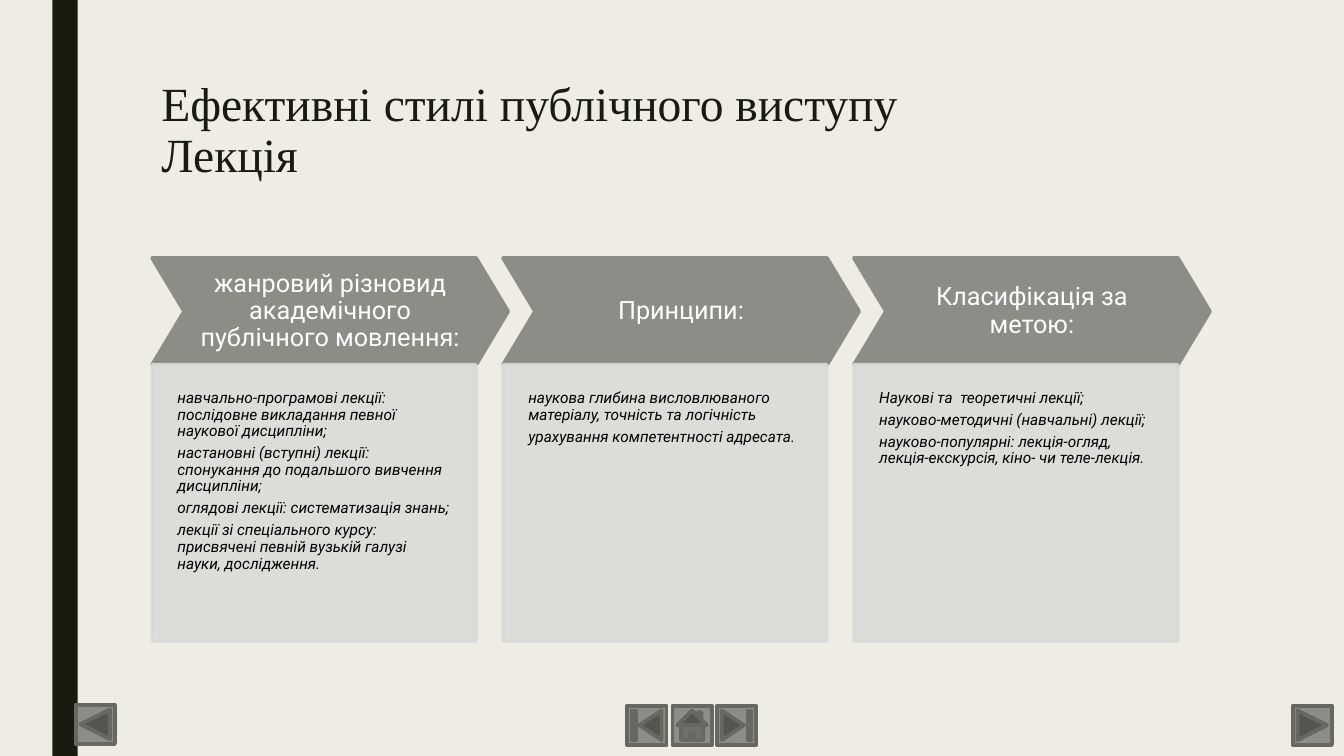
from dataclasses import dataclass

from lxml import etree
from pptx import Presentation
from pptx.dml.color import RGBColor
from pptx.enum.shapes import MSO_SHAPE
from pptx.enum.text import MSO_ANCHOR, MSO_AUTO_SIZE, PP_ALIGN
from pptx.oxml.ns import qn
from pptx.util import Inches, Pt

CHEVRON, RECTANGLE = MSO_SHAPE.CHEVRON, MSO_SHAPE.RECTANGLE
TOP, MIDDLE = MSO_ANCHOR.TOP, MSO_ANCHOR.MIDDLE
LEFT, CENTER = PP_ALIGN.LEFT, PP_ALIGN.CENTER


@dataclass(frozen=True)
class Theme:
    background: str = "EFEDE3"
    dark: str = "191B0E"
    accent: str = "8C8D86"
    card: str = "DADBD9"
    button_line: str = "686863"
    white: str = "FFFFFF"
    black: str = "000000"
    title_font: str = "Times New Roman"
    body_font: str = "Roboto"
    title_size: float = 34
    heading_size: float = 18
    body_size: float = 11
    line_width: float = 2.75


theme = Theme()


def add_block(kind, box, fill, line=None, opacity=None):
    """Add a filled shape; opacity is a percentage for fill and outline."""
    shape = slide.shapes.add_shape(kind, *map(Inches, box))
    shape.shadow.inherit = False
    shape.fill.solid()
    shape.fill.fore_color.rgb = RGBColor.from_string(fill)
    if line is None:
        shape.line.fill.background()
    else:
        shape.line.color.rgb = RGBColor.from_string(line)
        shape.line.width = Pt(theme.line_width)
    if opacity is not None:
        for color in shape._element.spPr.iter(qn("a:srgbClr")):
            etree.SubElement(color, qn("a:alpha"), val=str(opacity * 1000))
    return shape


def write_text(shape, lines, frame_format, paragraph_format, font_format, color):
    """Fill a shape with paragraphs that share one format."""
    frame = shape.text_frame
    frame.text = "\n".join(lines)
    for name, value in frame_format.items():
        setattr(frame, name, value)
    for paragraph in frame.paragraphs:
        for name, value in paragraph_format.items():
            setattr(paragraph, name, value)
        for run in paragraph.runs:
            for name, value in font_format.items():
                setattr(run.font, name, value)
            run.font.color.rgb = RGBColor.from_string(color)


# Text formats
title_frame = dict(word_wrap=True, auto_size=MSO_AUTO_SIZE.NONE, vertical_anchor=TOP)
title_paragraph = dict(alignment=LEFT, line_spacing=0.89)
title_text = dict(name=theme.title_font, size=Pt(theme.title_size))

heading_frame = dict(word_wrap=True, vertical_anchor=MIDDLE)
heading_frame |= {f"margin_{side}": Inches(0.13) for side in ("left", "top", "right", "bottom")}
heading_paragraph = dict(alignment=CENTER, line_spacing=0.9)
heading_text = dict(name=theme.body_font, size=Pt(theme.heading_size))

card_frame = dict(word_wrap=True, vertical_anchor=TOP, margin_bottom=Inches(0.51))
card_frame |= {f"margin_{side}": Inches(0.25) for side in ("left", "top", "right")}
card_paragraph = dict(alignment=LEFT, line_spacing=0.9, space_after=Pt(theme.body_size * 0.35))
card_text = dict(name=theme.body_font, size=Pt(theme.body_size), italic=True)

# Slide and background
presentation = Presentation()
presentation.slide_width, presentation.slide_height = Inches(13.33), Inches(7.5)
slide = presentation.slides.add_slide(presentation.slide_layouts[5])
slide.background.fill.solid()
slide.background.fill.fore_color.rgb = RGBColor.from_string(theme.background)
add_block(RECTANGLE, (0.52, 0, 0.25, 7.5), theme.dark)

# Title
title = slide.shapes.title
title.left, title.top, title.width, title.height = map(Inches, (1.5, 0.75, 10.5, 1.62))
write_text(title, ["Ефективні стилі публічного виступу\vЛекція"],
           title_frame, title_paragraph, title_text, theme.dark)

# Three columns: chevron heading above a card
columns = [
    ("жанровий різновид академічного публічного мовлення:", [
        "навчально-програмові лекції: послідовне викладання певної наукової дисципліни;",
        "настановні (вступні) лекції: спонукання до подальшого вивчення дисципліни;",
        "оглядові лекції: систематизація знань;",
        "лекції зі спеціального курсу: присвячені певній вузькій галузі науки, дослідження.",
    ]),
    ("Принципи:", [
        "наукова глибина висловлюваного матеріалу, точність та логічність",
        "урахування компетентності адресата.",
    ]),
    ("Класифікація за метою:", [
        "Наукові та  теоретичні лекції;",
        "науково-методичні (навчальні) лекції;",
        "науково-популярні: лекція-огляд, лекція-екскурсія, кіно- чи теле-лекція.",
    ]),
]
first_left, column_step = 1.51, 3.48
for index, (heading, items) in enumerate(columns):
    left = first_left + index * column_step
    chevron = add_block(CHEVRON, (left, 2.56, 3.53, 1.06), theme.accent, theme.accent)
    chevron.adjustments[0] = 0.3
    write_text(chevron, [heading], heading_frame, heading_paragraph, heading_text, theme.white)
    card = add_block(RECTANGLE, (left, 3.62, 3.21, 2.74), theme.card, theme.card, opacity=90)
    write_text(card, items, card_frame, card_paragraph, card_text, theme.black)

# Navigation buttons
button_size = 0.39
buttons = [
    (MSO_SHAPE.ACTION_BUTTON_BACK_OR_PREVIOUS, 0.75, 6.99),
    (MSO_SHAPE.ACTION_BUTTON_FORWARD_OR_NEXT, 12.82, 7),
    (MSO_SHAPE.ACTION_BUTTON_HOME, 6.67, 7),
    (MSO_SHAPE.ACTION_BUTTON_BEGINNING, 6.22, 7),
    (MSO_SHAPE.ACTION_BUTTON_END, 7.11, 7),
]
for kind, left, top in buttons:
    add_block(kind, (left, top, button_size, button_size), theme.accent, theme.button_line)

presentation.save("out.pptx")
